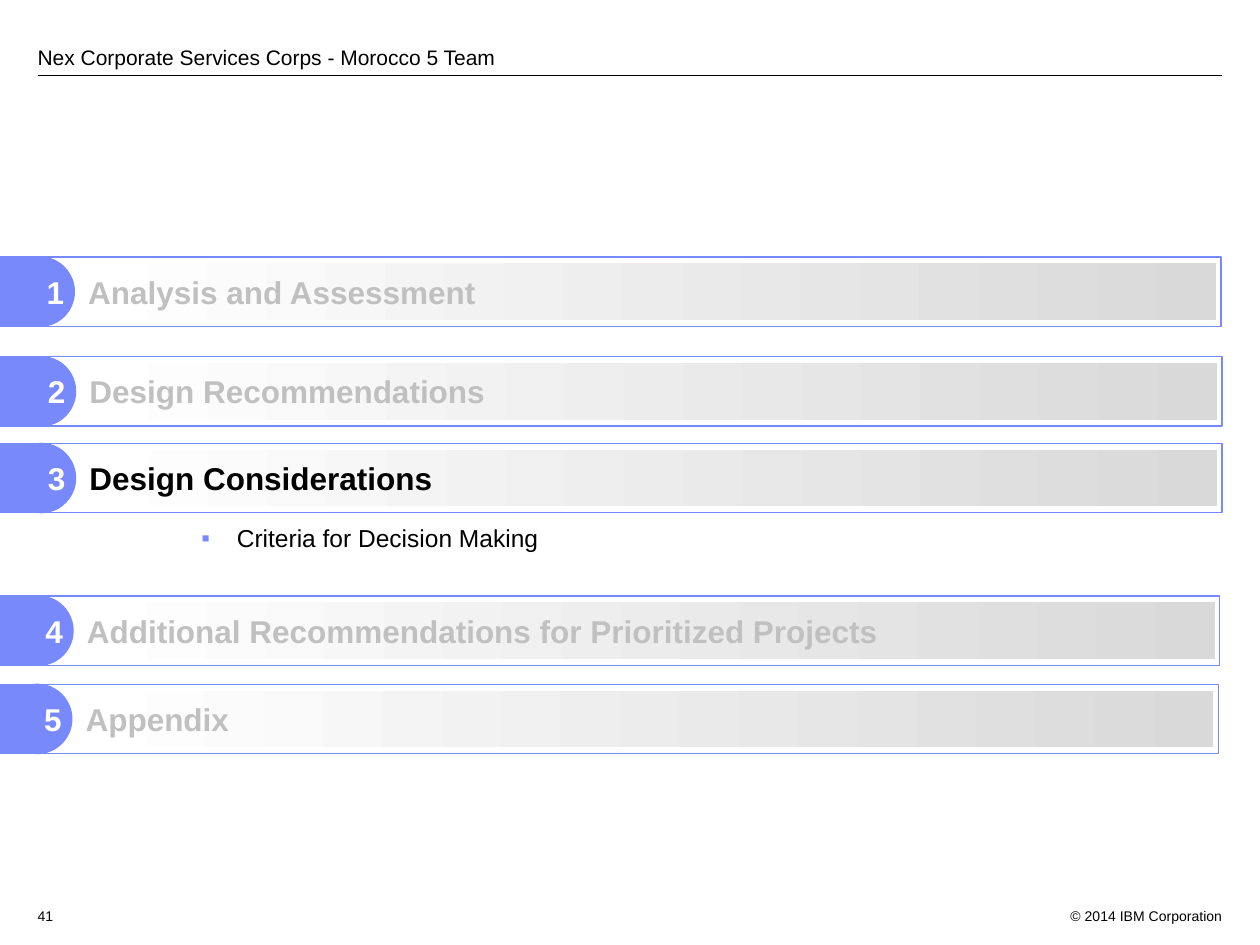
from lxml import etree
from pptx import Presentation
from pptx.dml.color import RGBColor
from pptx.enum.shapes import MSO_CONNECTOR, MSO_SHAPE
from pptx.enum.text import MSO_ANCHOR, PP_ALIGN
from pptx.oxml.ns import qn
from pptx.util import Pt

RECTANGLE, OVAL = MSO_SHAPE.RECTANGLE, MSO_SHAPE.OVAL
STRAIGHT = MSO_CONNECTOR.STRAIGHT
TOP, MIDDLE, BOTTOM = MSO_ANCHOR.TOP, MSO_ANCHOR.MIDDLE, MSO_ANCHOR.BOTTOM
LEFT, RIGHT = PP_ALIGN.LEFT, PP_ALIGN.RIGHT

BLACK = RGBColor(0x00, 0x00, 0x00)
WHITE = RGBColor(0xFF, 0xFF, 0xFF)
BLUE = RGBColor(0x78, 0x89, 0xFB)
MUTED = RGBColor(0xC0, 0xC0, 0xC0)
BAND_GRAY = RGBColor(0xD9, 0xD9, 0xD9)

FONT = "Arial"
BAR_WIDTH, BAR_HEIGHT = 698.4, 39.6
SECTIONS = [
    ("Analysis and Assessment", -0.72, 146.9, MUTED),
    ("Design Recommendations", 0, 203.8, MUTED),
    ("Design Considerations", 0, 253.4, BLACK),
    ("Additional Recommendations for Prioritized Projects", -1.44, 340.6, MUTED),
    ("Appendix", -2.16, 391, MUTED),
]


def write_text(shape, text, size, color, bold=False, align=LEFT, anchor=TOP,
               margins=(7.2, 3.6, 7.2, 3.6)):
    """Write one paragraph into a shape and return the paragraph."""
    frame = shape.text_frame
    frame.word_wrap = True
    frame.vertical_anchor = anchor
    (frame.margin_left, frame.margin_top,
     frame.margin_right, frame.margin_bottom) = map(Pt, margins)
    paragraph = frame.paragraphs[0]
    paragraph.alignment = align
    run = paragraph.add_run()
    run.text = text
    run.font.name = FONT
    run.font.size = Pt(size)
    run.font.bold = bold
    run.font.color.rgb = color
    return paragraph


def add_label(slide, box, text, size, **options):
    """Add a black text box and return its paragraph."""
    shape = slide.shapes.add_textbox(*map(Pt, box))
    return write_text(shape, text, size, BLACK, **options)


def add_box(shapes, kind, box, fill=None, line=None):
    """Add a flat preset shape with an optional fill and outline."""
    shape = shapes.add_shape(kind, *map(Pt, box))
    shape.shadow.inherit = False
    if fill is None:
        shape.fill.background()
    else:
        shape.fill.solid()
        shape.fill.fore_color.rgb = fill
    if line is None:
        shape.line.fill.background()
    else:
        shape.line.color.rgb = line
        shape.line.width = Pt(0.75)
    return shape


def add_header(slide, left, top, width, height):
    """Place the header text and the rule beneath it."""
    add_label(slide, (left - 7.2, top, width, height),
              "Nex Corporate Services Corps - Morocco 5 Team", 12,
              anchor=BOTTOM, margins=(7.2, 0, 7.2, 0))
    rule_top = Pt(top + height + 3.6)
    rule = slide.shapes.add_connector(STRAIGHT, Pt(left), rule_top,
                                      Pt(left + width), rule_top)
    rule.line.color.rgb = BLACK
    rule.line.width = Pt(0.75)
    etree.SubElement(rule._element.spPr, qn("a:effectLst"))


def add_section(slide, left, top, width, height, number, title, title_color):
    """Place one numbered agenda bar as a group."""
    shapes = slide.shapes.add_group_shape().shapes
    badge = add_box(shapes, OVAL, (left + 3.6, top, height, height), BLUE, BLUE)
    write_text(badge, str(number), 18, WHITE, bold=True, align=RIGHT,
               anchor=MIDDLE, margins=(0, 0, 0, 0))
    add_box(shapes, RECTANGLE, (left, top, width, height), line=BLUE)
    add_box(shapes, RECTANGLE, (left, top, 21.6, height), BLUE)
    band = add_box(shapes, RECTANGLE,
                   (left + 51.1, top + 3.6, width - 54, height - 7.2))
    band.fill.gradient()
    band.fill.gradient_angle = 0
    for stop, position, color in zip(band.fill.gradient_stops, (0, 1),
                                     (WHITE, BAND_GRAY)):
        stop.position = position
        stop.color.rgb = color
    write_text(band, title, 18, title_color, bold=True, anchor=MIDDLE,
               margins=(0, 3.6, 7.2, 3.6))


def add_topic(slide, left, top, width, height, text):
    """Place a bulleted topic under its section."""
    paragraph = add_label(slide, (left, top, width, height), text, 14)
    properties = paragraph._p.get_or_add_pPr()
    properties.set("marL", str(Pt(20.3)))
    properties.set("indent", str(-Pt(20.3)))
    color = etree.SubElement(properties, qn("a:buClr"))
    etree.SubElement(color, qn("a:srgbClr"), val=str(BLUE))
    etree.SubElement(properties, qn("a:buFont"), typeface=FONT)
    etree.SubElement(properties, qn("a:buChar"), char="▪")


def add_footer(slide, left, top, width, height):
    """Place the page number and the copyright line."""
    add_label(slide, (left, top, 28.8, height), "41", 8)
    add_label(slide, (left + width - 108, top, 108, height),
              "© 2014 IBM Corporation", 8, align=RIGHT)


def main():
    """Build the agenda slide."""
    presentation = Presentation()
    presentation.slide_width, presentation.slide_height = Pt(720), Pt(540)
    slide = presentation.slides.add_slide(presentation.slide_layouts[6])
    add_header(slide, 21.6, 10.8, 676.8, 28.8)
    for number, (title, left, top, color) in enumerate(SECTIONS, 1):
        add_section(slide, left, top, BAR_WIDTH, BAR_HEIGHT, number, title, color)
    add_topic(slide, 108, 295.2, 360, 24, "Criteria for Decision Making")
    add_footer(slide, 14.4, 514.8, 691.2, 14.4)
    presentation.save("out.pptx")


if __name__ == "__main__":
    main()
